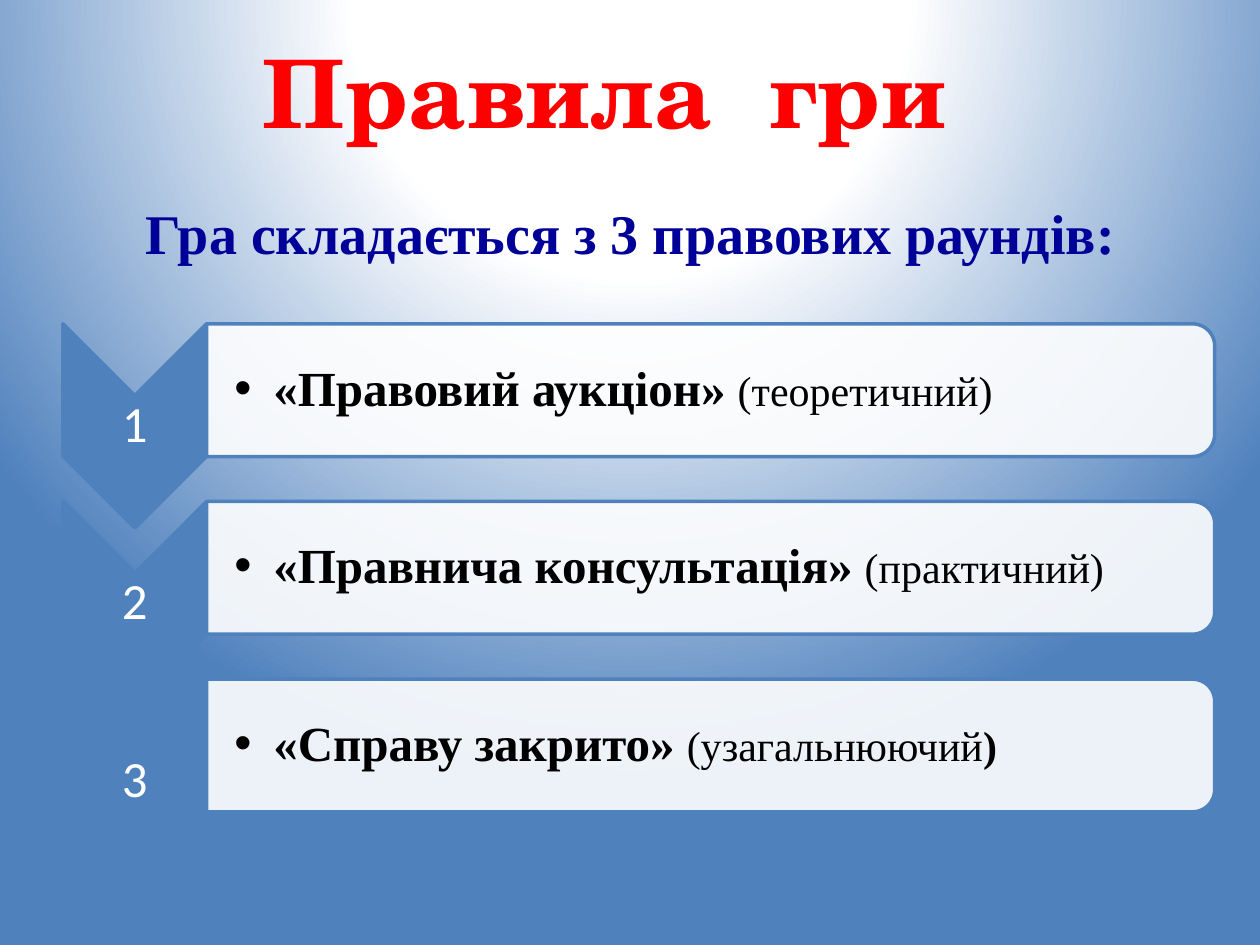
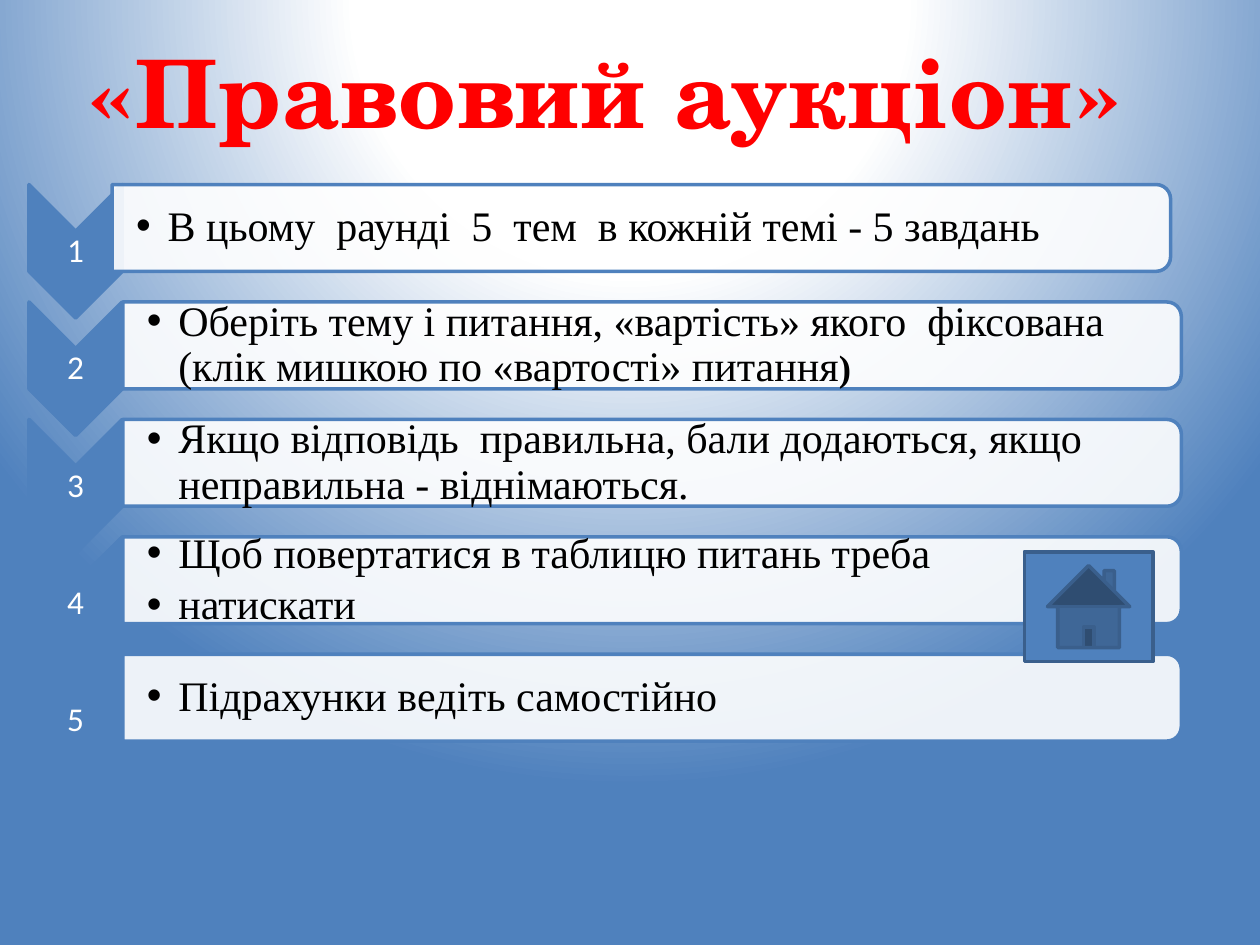
from lxml.etree import SubElement
from pptx import Presentation
from pptx.dml.color import RGBColor
from pptx.enum.shapes import MSO_SHAPE
from pptx.enum.text import MSO_ANCHOR, MSO_AUTO_SIZE, PP_ALIGN
from pptx.oxml import parse_xml
from pptx.oxml.ns import nsdecls, qn
from pptx.util import Emu, Inches, Pt

SLIDE_WIDTH, SLIDE_HEIGHT = Inches(10), Inches(7.5)
COLUMNS = 100
CELL = SLIDE_WIDTH / COLUMNS
BLUE, DARK_BLUE, NAVY = "4F81BD", "3A5F8C", "000099"
WHITE, BLACK, RED = "FFFFFF", "000000", "FF0000"
SERIF, SANS, DISPLAY = "Times New Roman", "Calibri", "TeX Gyre Schola"
BAR_SHARE = 0.65
BAR_TEXT_SHARE = 0.9


def cells(*counts):
    """Turn counts of grid cells into lengths."""
    return [Emu(round(count * CELL)) for count in counts]


def color(hex_code):
    """Turn a hex string into a colour."""
    return RGBColor.from_string(hex_code)


def paint_background(master):
    """Give every slide the white glow that fades to blue."""
    master.background.fill.solid()
    background = master.element.find(".//" + qn("p:bgPr"))
    stops = "".join(
        f'<a:gs pos="{position}"><a:srgbClr val="{tint}"/></a:gs>'
        for position, tint in ((0, WHITE), (35000, WHITE), (100000, BLUE))
    )
    glow = parse_xml(
        f'<a:gradFill rotWithShape="1" {nsdecls("a")}><a:gsLst>{stops}</a:gsLst>'
        '<a:path path="circle"><a:fillToRect l="50000" t="-80000" r="50000" b="180000"/>'
        "</a:path></a:gradFill>"
    )
    background.replace(background.find(qn("a:solidFill")), glow)


def add_bullet(paragraph, indent):
    """Hang a round bullet in front of a paragraph."""
    hang = cells(indent)[0]
    properties = paragraph._p.get_or_add_pPr()
    properties.set("marL", str(hang))
    properties.set("indent", str(-hang))
    SubElement(properties, qn("a:buFont"), typeface="Arial")
    SubElement(properties, qn("a:buChar"), char="•")


def write(frame, paragraphs, size, font=SERIF, ink=BLACK, bold=False, align=PP_ALIGN.LEFT,
          anchor=MSO_ANCHOR.TOP, wrap=True, margins=None, indent=0, line_spacing=1.0,
          space_after=0, tracking=0):
    """Fill a frame with paragraphs of (text, size, bold) runs or plain strings."""
    frame.word_wrap, frame.vertical_anchor = wrap, anchor
    frame.auto_size = MSO_AUTO_SIZE.NONE
    if margins:
        (frame.margin_left, frame.margin_top,
         frame.margin_right, frame.margin_bottom) = cells(*margins)
    for index, runs in enumerate(paragraphs):
        paragraph = frame.add_paragraph() if index else frame.paragraphs[0]
        if indent:
            add_bullet(paragraph, indent)
        paragraph.alignment = align
        paragraph.line_spacing = line_spacing
        paragraph.space_after = Pt(space_after)
        for part in [(runs, size, bold)] if isinstance(runs, str) else runs:
            run = paragraph.add_run()
            run.text, points, run.font.bold = part
            run.font.size, run.font.name = Pt(points), font
            run.font.color.rgb = color(ink)
            if tracking:
                run._r.get_or_add_rPr().set("spc", str(tracking))


def add_text(slide, box, paragraphs, **style):
    """Put a text box on the grid."""
    write(slide.shapes.add_textbox(*cells(*box)).text_frame, paragraphs, **style)


def add_figure(slide, kind, box, fill, line=BLUE, alpha=None):
    """Draw a filled, outlined preset shape."""
    figure = slide.shapes.add_shape(kind, *cells(*box))
    figure.shadow.inherit = False
    figure.fill.solid()
    figure.fill.fore_color.rgb = color(fill)
    figure.line.color.rgb = color(line)
    figure.line.width = Pt(2)
    if alpha:
        tint = figure._element.spPr.find(qn("a:solidFill"))[0]
        SubElement(tint, qn("a:alpha"), val=str(alpha * 1000))
    return figure


def add_turned(slide, kind, box, fill, alpha=None):
    """Draw a shape turned a quarter right so that it covers the given box."""
    left, top, width, height = box
    shift = (width - height) / 2
    unturned = (left + shift, top - shift, height, width)
    add_figure(slide, kind, unturned, fill, alpha=alpha).rotation = 90


def add_slide(deck, title):
    """Add a slide with the red title."""
    slide = deck.slides.add_slide(deck.slide_layouts[5])
    heading = slide.shapes.title
    heading.left, heading.top, heading.width, heading.height = cells(4.2, 2.2, 87.6, 19.2)
    write(heading.text_frame, [title], size=54, font=DISPLAY, ink=RED, bold=True,
          align=PP_ALIGN.CENTER, wrap=False, tracking=50)
    return slide


def add_step(slide, number, paragraphs, chevron, bar_left, bar_width,
             number_size, text_size, text_margin, indent):
    """Add a numbered chevron with its text bar."""
    left, top, width, height = chevron
    add_turned(slide, MSO_SHAPE.CHEVRON, chevron, BLUE)
    add_text(slide, (left, top + width / 2, width, height - width), [str(number)],
             size=number_size, font=SANS, ink=WHITE, align=PP_ALIGN.CENTER,
             anchor=MSO_ANCHOR.MIDDLE, margins=(0.2,) * 4, line_spacing=0.9)
    bar_height = height * BAR_SHARE
    add_turned(slide, MSO_SHAPE.ROUND_2_SAME_RECTANGLE,
               (bar_left, top, bar_width, bar_height), WHITE, alpha=90)
    text_height = bar_height * BAR_TEXT_SHARE
    text_top = top + (bar_height - text_height) / 2
    add_text(slide, (bar_left, text_top, bar_width - 0.4, text_height), paragraphs,
             size=text_size, anchor=MSO_ANCHOR.MIDDLE, margins=(text_margin, 0.2, 0.2, 0.2),
             indent=indent, line_spacing=0.9, space_after=text_size * 0.15)


def add_rules(deck):
    """Build the slide that lists the three rounds."""
    slide = add_slide(deck, "Правила  гри")
    rounds = [
        [("«Правовий аукціон» ", 28, True), ("(теоретичний)", 24, False)],
        [("«Правнича консультація» ", 28, True), ("(практичний)", 24, False)],
        [("«Справу закрито» ", 28, True), ("(узагальнюючий", 24, False), (")", 24, True)],
    ]
    for index, round_name in enumerate(rounds):
        add_step(slide, index + 1, [round_name], (5, 25.7 + 14.1 * index, 11.4, 16.2),
                 bar_left=16.4, bar_width=80, number_size=29, text_size=28,
                 text_margin=2.2, indent=3.1)
    add_text(slide, (10.6, 15.3, 84.3, 6.4), ["Гра складається з 3 правових раундів:"],
             size=32, ink=NAVY, bold=True)


def add_auction(deck):
    """Build the slide that explains the auction round."""
    slide = add_slide(deck, "«Правовий аукціон»")
    steps = [
        ["В цьому  раунді  5  тем  в кожній темі - 5 завдань"],
        [[("Оберіть тему і питання, «вартість» якого  фіксована "
           "(клік мишкою по «вартості» питання", 24, False), (")", 21, True)]],
        ["Якщо відповідь  правильна, бали додаються, якщо неправильна - віднімаються."],
        ["Щоб повертатися в таблицю питань треба", "натискати"],
        ["Підрахунки ведіть самостійно"],
    ]
    for index, step in enumerate(steps):
        add_step(slide, index + 1, step, (2.3, 14.65 + 9.32 * index, 7.4, 10.6),
                 bar_left=9.75 if index else 8.9, bar_width=84, number_size=19,
                 text_size=24, text_margin=1.9, indent=2.5)
    add_figure(slide, MSO_SHAPE.ACTION_BUTTON_HOME, (81.3, 43.8, 10.2, 8.7), BLUE, DARK_BLUE)


def main():
    """Build and save the deck."""
    deck = Presentation()
    deck.slide_width, deck.slide_height = SLIDE_WIDTH, SLIDE_HEIGHT
    paint_background(deck.slide_master)
    add_rules(deck)
    add_auction(deck)
    deck.save("out.pptx")


if __name__ == "__main__":
    main()
